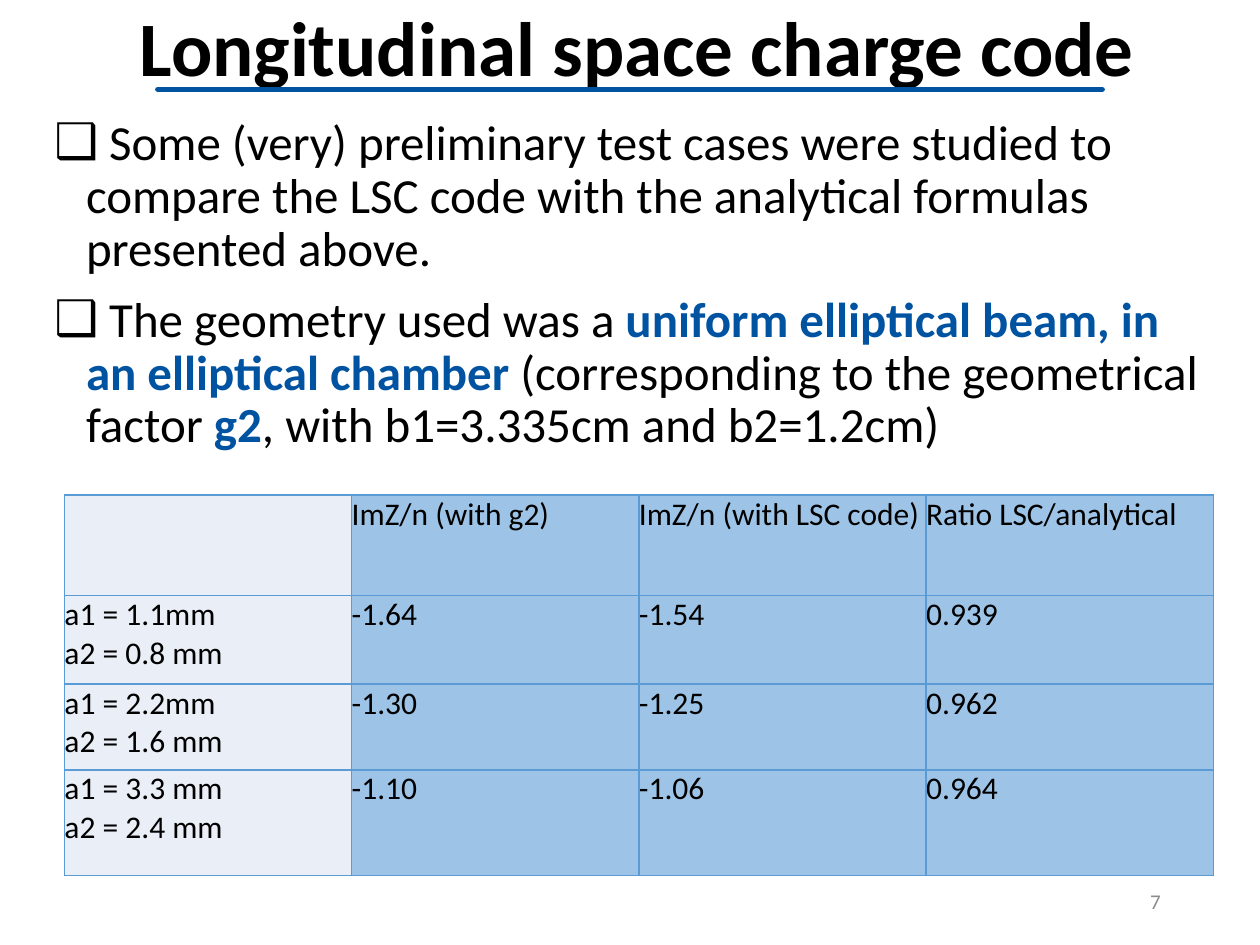
from pptx import Presentation
from pptx.dml.color import RGBColor
from pptx.enum.shapes import MSO_CONNECTOR
from pptx.enum.text import MSO_ANCHOR, MSO_AUTO_SIZE, PP_ALIGN
from pptx.oxml.ns import qn
from pptx.util import Cm, Pt
from lxml.etree import SubElement

BLACK = RGBColor(0x00, 0x00, 0x00)
BLUE = RGBColor(0x00, 0x53, 0xA1)
GREY = RGBColor(0x8C, 0x8C, 0x8C)
PALE = RGBColor(0xEA, 0xEF, 0xF7)
SKY = RGBColor(0x9D, 0xC3, 0xE6)
BORDER = RGBColor(0x5B, 0x9B, 0xD5)
FONT = "Calibri"

BULLETS = [
    [(" Some (very) preliminary test cases were studied to compare the LSC code "
      "with the analytical formulas presented above.", False)],
    [(" The geometry used was a ", False),
     ("uniform elliptical beam, in an elliptical chamber ", True),
     ("(corresponding to the geometrical factor ", False),
     ("g2", True),
     (", with b1=3.335cm and b2=1.2cm)", False)],
]
ROWS = [
    ("", "ImZ/n (with g2)", "ImZ/n (with LSC code)", "Ratio LSC/analytical"),
    ("a1 = 1.1mm\na2 = 0.8 mm", "-1.64", "-1.54", "0.939"),
    ("a1 = 2.2mm\na2 = 1.6 mm", "-1.30", "-1.25", "0.962"),
    ("a1 = 3.3 mm\na2 = 2.4 mm", "-1.10", "-1.06", "0.964"),
]
ROW_HEIGHTS = [2.03, 1.78, 1.73, 2.13]
COLUMN_WIDTH = 5.79
TABLE_HEIGHT = 7.82


def add_text(p, text, size=18, color=BLACK, bold=False):
    """Append text to a paragraph, turning each newline into a line break."""
    for i, line in enumerate(text.split("\n")):
        if i:
            p.add_line_break()
        r = p.add_run()
        r.text = line
        r.font.name = FONT
        r.font.size = Pt(size)
        r.font.bold = bold
        r.font.color.rgb = color


def place(sp, left, top, width, height):
    sp.left, sp.top, sp.width, sp.height = Cm(left), Cm(top), Cm(width), Cm(height)


def prepare_frame(sp, anchor):
    tf = sp.text_frame
    tf.word_wrap = True
    tf.auto_size = MSO_AUTO_SIZE.NONE
    tf.vertical_anchor = anchor
    return tf


def fill_title(sp):
    place(sp, -0.3, 0.33, 26.31, 1.42)
    p = prepare_frame(sp, MSO_ANCHOR.MIDDLE).paragraphs[0]
    p.alignment = PP_ALIGN.CENTER
    p.line_spacing = 0.9
    add_text(p, "Longitudinal space charge code", size=44, bold=True)


def add_title_rule(s):
    line = s.shapes.add_connector(
        MSO_CONNECTOR.STRAIGHT, Cm(3.18), Cm(1.8), Cm(22.22), Cm(1.8))
    line.line.color.rgb = BLUE
    line.line.width = Pt(3)
    spPr = line._element.spPr
    spPr.find(qn("a:ln")).set("cap", "rnd")
    SubElement(spPr, qn("a:effectLst"))


def set_bullet(p, char, indent):
    pPr = p._p.get_or_add_pPr()
    pPr.set("marL", str(indent))
    pPr.set("indent", str(-indent))
    SubElement(pPr, qn("a:buChar")).set("char", char)


def fill_body(sp):
    place(sp, 0.84, 2.26, 23.9, 16.41)
    tf = prepare_frame(sp, MSO_ANCHOR.TOP)
    for i, parts in enumerate(BULLETS):
        p = tf.add_paragraph() if i else tf.paragraphs[0]
        p.line_spacing = 0.9
        p.space_before = Pt(10)
        set_bullet(p, "❑", Cm(0.64))
        for text, strong in parts:
            add_text(p, text, size=28, color=BLUE if strong else BLACK, bold=strong)


def set_borders(cell):
    tcPr = cell._tc.get_or_add_tcPr()
    for i, side in enumerate(("lnL", "lnR", "lnT", "lnB")):
        ln = tcPr.makeelement(qn(f"a:{side}"), {"w": str(Pt(1))})
        fill = SubElement(ln, qn("a:solidFill"))
        SubElement(fill, qn("a:srgbClr")).set("val", str(BORDER))
        tcPr.insert(i, ln)


def add_results_table(s):
    columns = len(ROWS[0])
    frame = s.shapes.add_table(
        len(ROWS), columns, Cm(1.3), Cm(9.98),
        Cm(COLUMN_WIDTH * columns), Cm(TABLE_HEIGHT))
    table = frame.table
    table.first_row = table.horz_banding = False
    for column in table.columns:
        column.width = Cm(COLUMN_WIDTH)
    for i, values in enumerate(ROWS):
        table.rows[i].height = Cm(ROW_HEIGHTS[i])
        for j, text in enumerate(values):
            cell = table.cell(i, j)
            cell.fill.solid()
            cell.fill.fore_color.rgb = SKY if j else PALE
            set_borders(cell)
            cell.margin_left = cell.margin_right = 0
            cell.margin_top = cell.margin_bottom = 0
            if text:
                add_text(cell.text_frame.paragraphs[0], text)
    frame.height = Cm(TABLE_HEIGHT)


def add_page_number(s):
    sp = s.shapes.add_textbox(Cm(17.93), Cm(17.65), Cm(5.72), Cm(1.02))
    p = prepare_frame(sp, MSO_ANCHOR.MIDDLE).paragraphs[0]
    p.alignment = PP_ALIGN.RIGHT
    add_text(p, "7", size=12, color=GREY)


def main():
    prs = Presentation()
    prs.slide_width, prs.slide_height = Cm(25.4), Cm(19.05)
    s = prs.slides.add_slide(prs.slide_layouts[1])
    fill_title(s.shapes.title)
    fill_body(s.placeholders[1])
    add_title_rule(s)
    add_page_number(s)
    add_results_table(s)
    prs.save("out.pptx")


if __name__ == "__main__":
    main()
